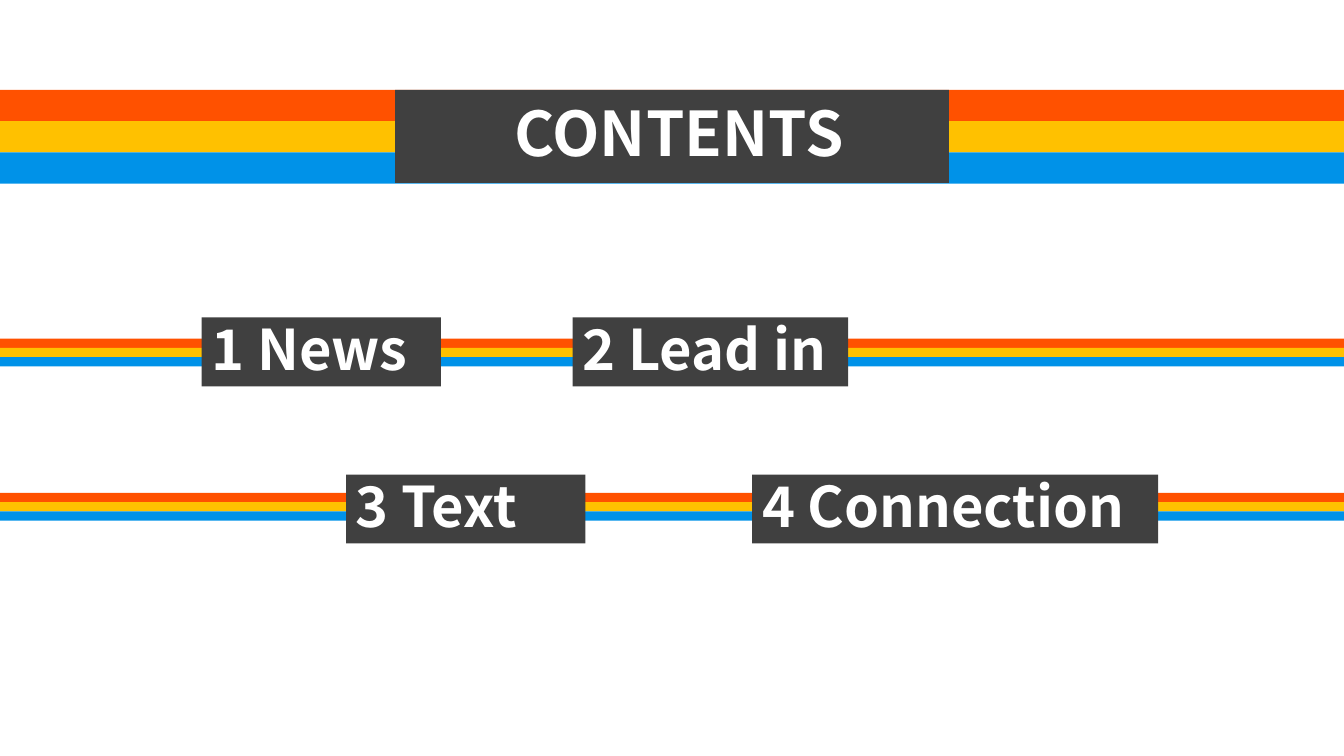
from pptx import Presentation
from pptx.dml.color import RGBColor as RGB
from pptx.enum.shapes import MSO_SHAPE as SHAPE
from pptx.enum.text import MSO_ANCHOR as ANCHOR, PP_ALIGN as ALIGN
from pptx.util import Inches, Pt

THEME = {
    "font": "Noto Sans CJK SC",
    "stripes": ["FF5100", "FFC100", "0092E8"],
    "label": "404040",
    "text": "FFFFFF",
    "title_size": 44,
    "item_size": 40,
}

prs = Presentation()
prs.slide_width, prs.slide_height = Inches(13.33), Inches(7.5)
s = prs.slides.add_slide(prs.slide_layouts[6])


def add_box(left, top, width, height, color):
    """Add a plain rectangle; lengths are percentages of the slide."""
    x, y = prs.slide_width / 100, prs.slide_height / 100
    sp = s.shapes.add_shape(SHAPE.RECTANGLE, int(left * x), int(top * y),
                            int(width * x), int(height * y))
    sp.shadow.inherit = False
    sp.fill.solid()
    sp.fill.fore_color.rgb = RGB.from_string(color)
    sp.line.fill.background()
    return sp


def add_label(text, left, top, width, height, size, align=ALIGN.LEFT):
    sp = add_box(left, top, width, height, THEME["label"])
    tf = sp.text_frame
    tf.word_wrap = True
    tf.vertical_anchor = ANCHOR.MIDDLE
    p = tf.paragraphs[0]
    p.text = text
    p.alignment = align
    p.line_spacing = 0.9
    p.font.name = THEME["font"]
    p.font.size = Pt(size)
    p.font.bold = True
    p.font.color.rgb = RGB.from_string(THEME["text"])
    return sp


# Striped bands: top and stripe height
TITLE_TOP, TITLE_STRIPE = 11.9, 4.13
ROW_STRIPE = 1.23
for top, stripe in [(TITLE_TOP, TITLE_STRIPE), (65.2, ROW_STRIPE), (44.8, ROW_STRIPE)]:
    for i, color in enumerate(THEME["stripes"]):
        add_box(0, top + i * stripe, 100, stripe, color)

# Title, centred on its band
TITLE_WIDTH = 41.2
title = add_label("CONTENTS", (100 - TITLE_WIDTH) / 2, TITLE_TOP, TITLE_WIDTH,
                  12.3, THEME["title_size"], ALIGN.CENTER)
title.text_frame.margin_left = Inches(0.24)

# Contents items, two to a row
ITEM_HEIGHT = 9.1
rows = [
    (42, [("1 News", 15, 17.8), ("2 Lead in", 42.6, 20.5)]),
    (62.8, [("3 Text", 25.75, 17.8), ("4 Connection", 55.97, 30.2)]),
]
for top, items in rows:
    for text, left, width in items:
        add_label(text, left, top, width, ITEM_HEIGHT, THEME["item_size"])

prs.save("out.pptx")
